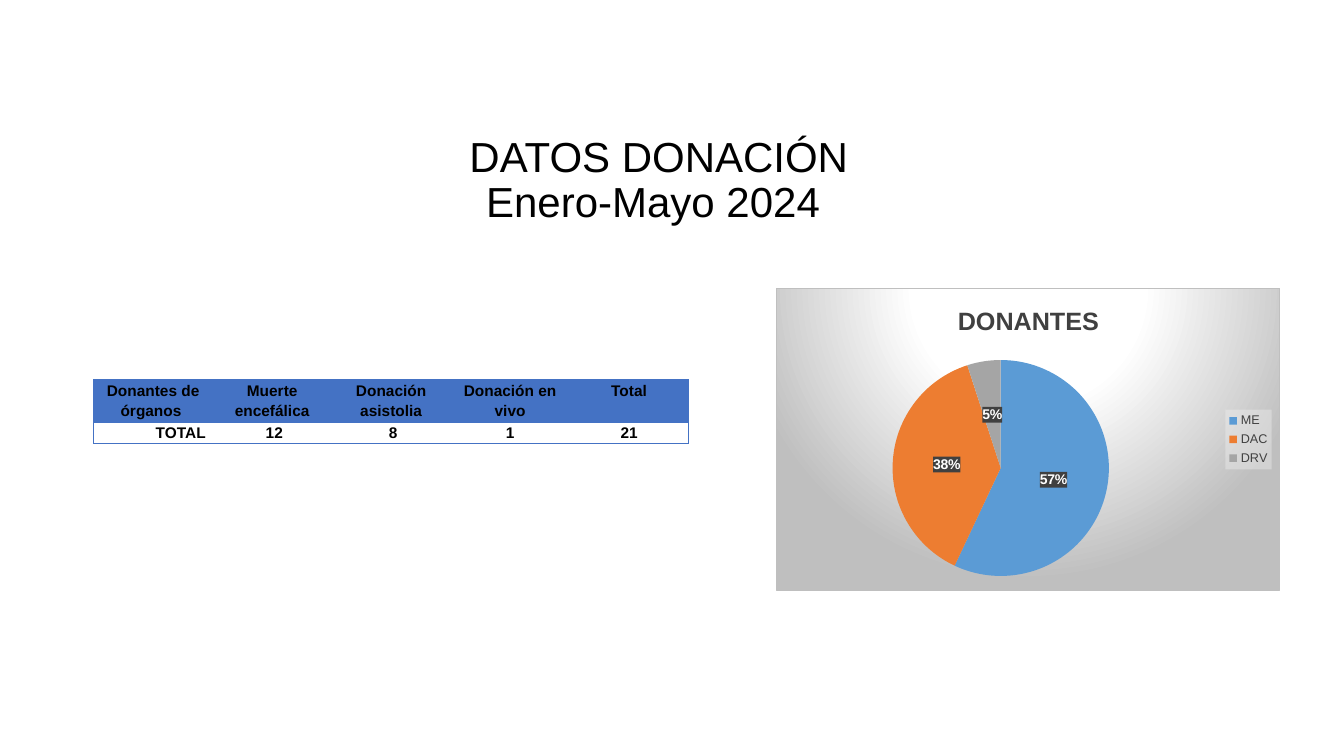
import pptx
import pptx.util
import pptx.chart.data
import pptx.enum.chart
import pptx.enum.text
import pptx.dml.color
import pptx.oxml
import pptx.oxml.ns

TITLE = "DATOS DONACIÓN\vEnero-Mayo 2024 "
ROWS = [
    ["Donantes de órganos ", "Muerte encefálica", "Donación asistolia", "Donación en vivo", "Total"],
    ["TOTAL", " 12", " 8", "1", "21"],
]
DONORS = {"ME": 57, "DAC": 38, "DRV": 5}
HEAD = "DONANTES"
HEX = {"ink": "000000", "blue": "4472C4", "white": "FFFFFF", "gray": "404040", "edge": "BFBFBF",
       "pale": "F2F2F2", "ME": "5B9BD5", "DAC": "ED7D31", "DRV": "A5A5A5"}
FACE = "Arial"
WIDE, HIGH = 13.33, 7.5
PIE = {"x": 0.23, "y": 0.23, "w": 0.43, "h": 0.73}

inch = pptx.util.Inches
Pt = pptx.util.Pt
ALIGN = pptx.enum.text.PP_ALIGN


def rgb(name):
    return pptx.dml.color.RGBColor.from_string(HEX[name])


def style(font, size, color, bold=False):
    font.name, font.size, font.bold = FACE, Pt(size), bold
    font.color.rgb = rgb(color)


def write(frame, text, size=11, color="ink", bold=False, align=ALIGN.CENTER, space=None):
    para = frame.paragraphs[0]
    para.text = text
    para.alignment = align
    if space:
        para.line_spacing = space
    for run in para.runs:
        style(run.font, size, color, bold)


def node(tag, body):
    spaces = pptx.oxml.ns.nsdecls("a", "c")
    return pptx.oxml.parse_xml(f"<{tag} {spaces}>{body}</{tag}>")


def solid(name, alpha=100):
    return f'<a:solidFill><a:srgbClr val="{HEX[name]}"><a:alpha val="{alpha * 1000}"/></a:srgbClr></a:solidFill>'


def edge(cell, sides):
    props = cell._tc.get_or_add_tcPr()
    for side in sides:
        line = node(f"a:ln{side}", solid("blue"))
        line.set("w", str(Pt(1)))
        props.append(line)


def add_title(slide):
    box = slide.shapes.add_textbox(inch(2.87), inch(1.3), inch(WIDE * 0.55), inch(HIGH * 0.17))
    box.text_frame.word_wrap = True
    write(box.text_frame, TITLE, size=30, space=0.9)


def add_grid(slide):
    cols = len(ROWS[0])
    shape = slide.shapes.add_table(len(ROWS), cols, inch(0.93), inch(3.77), inch(5.9), inch(0.6))
    grid = shape.table
    grid.first_row = grid.horz_banding = False
    grid._tbl.tblPr.find(pptx.oxml.ns.qn("a:tableStyleId")).text = "{2D5ABB26-0587-4C30-8999-92F81FD0307C}"
    for r, row in enumerate(ROWS):
        grid.rows[r].height = inch(0.2 * (2 - r))
        for c, text in enumerate(row):
            cell = grid.cell(r, c)
            cell.margin_left = cell.margin_right = inch(0.07)
            cell.margin_top = cell.margin_bottom = 0
            edge(cell, ("L" if c == 0 else "") + ("R" if c == cols - 1 else "") + "TB")
            cell.fill.solid()
            cell.fill.fore_color.rgb = rgb("white" if r else "blue")
            align = ALIGN.RIGHT if r and c == 0 else ALIGN.CENTER
            write(cell.text_frame, text, bold=True, align=align, space=1.15)


def add_pie(slide):
    kinds = pptx.enum.chart
    data = pptx.chart.data.CategoryChartData()
    data.categories = list(DONORS)
    data.add_series("Series 1", list(DONORS.values()))
    chart = slide.shapes.add_chart(kinds.XL_CHART_TYPE.PIE, inch(7.7), inch(2.86), inch(5), inch(3), data).chart
    style(chart.font, 10, "ink")
    chart.has_title = True
    write(chart.chart_title.text_frame, HEAD, size=18, color="gray", bold=True)
    chart.chart_title.include_in_layout = False

    chart.has_legend = True
    key = chart.legend
    key.position = kinds.XL_LEGEND_POSITION.RIGHT
    key.include_in_layout = False
    style(key.font, 9, "gray")
    key._element.txPr.addprevious(node("c:spPr", solid("pale", 39)))

    plot = chart.plots[0]
    plot.vary_by_categories = True
    for i, name in enumerate(DONORS):
        fill = plot.series[0].points[i].format.fill
        fill.solid()
        fill.fore_color.rgb = rgb(name)
    plot.has_data_labels = True
    tags = plot.data_labels
    tags.show_percentage, tags.show_value = True, False
    tags.number_format, tags.number_format_is_linked = "0%", False
    tags.position = kinds.XL_LABEL_POSITION.CENTER
    style(tags.font, 10, "white", True)
    tags._element.find(pptx.oxml.ns.qn("c:txPr")).addprevious(node("c:spPr", solid("gray", 90)))

    area = chart._chartSpace.chart.plotArea
    for old in area.findall(pptx.oxml.ns.qn("c:layout")):
        area.remove(old)
    modes = '<c:layoutTarget val="inner"/><c:xMode val="edge"/><c:yMode val="edge"/>'
    parts = "".join(f'<c:{k} val="{v}"/>' for k, v in PIE.items())
    area.insert(0, node("c:layout", f"<c:manualLayout>{modes}{parts}</c:manualLayout>"))

    stops = "".join(f'<a:gs pos="{at * 1000}"><a:srgbClr val="{HEX[name]}"/></a:gs>'
                    for at, name in [(0, "white"), (39, "white"), (100, "edge")])
    focus = '<a:path path="circle"><a:fillToRect l="50000" t="-80000" r="50000" b="180000"/></a:path>'
    back = f'<a:gradFill><a:gsLst>{stops}</a:gsLst>{focus}</a:gradFill>'
    rim = f'<a:ln w="{Pt(0.75)}">{solid("edge")}</a:ln>'
    chart._chartSpace.chart.addnext(node("c:spPr", back + rim))


def main():
    deck = pptx.Presentation()
    deck.slide_width, deck.slide_height = inch(WIDE), inch(HIGH)
    slide = deck.slides.add_slide(deck.slide_layouts[6])
    add_title(slide)
    add_grid(slide)
    add_pie(slide)
    deck.save("out.pptx")


if __name__ == "__main__":
    main()
